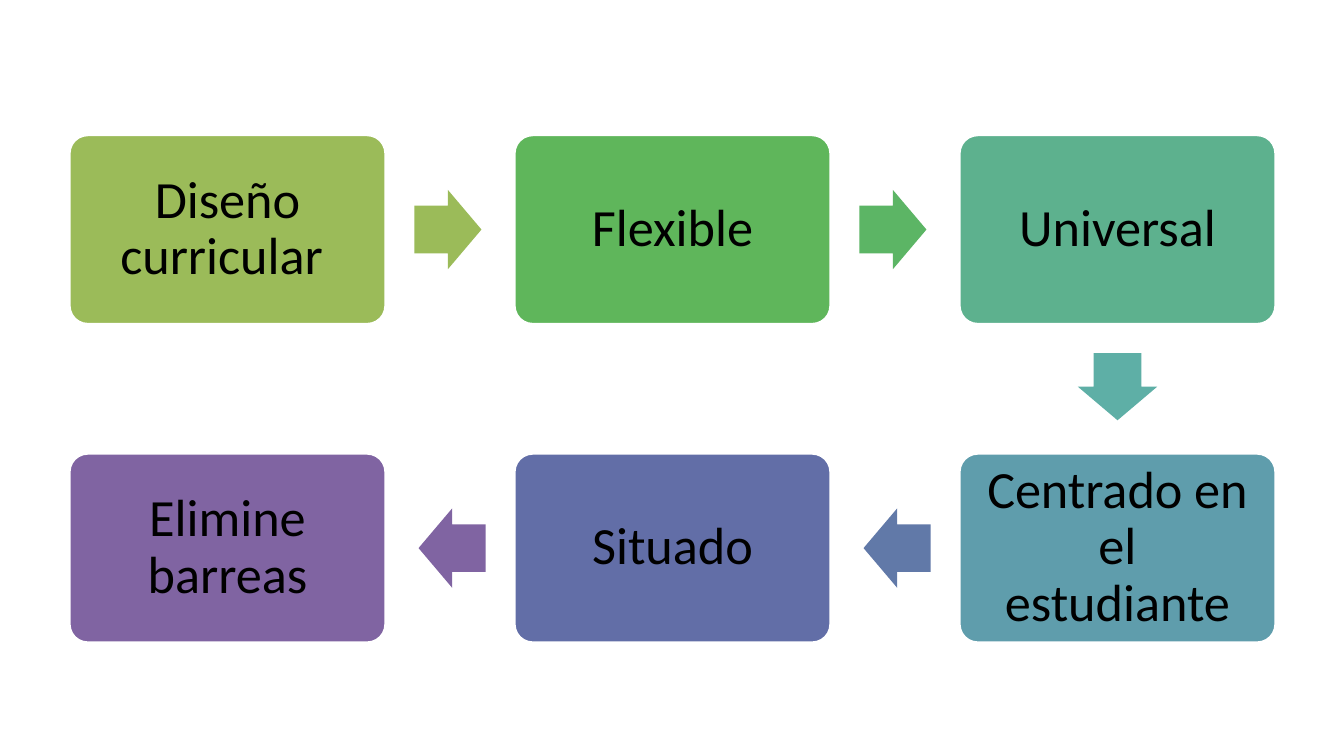
from pptx import Presentation
from pptx.dml.color import RGBColor
from pptx.enum.shapes import MSO_SHAPE as Shape
from pptx.enum.text import MSO_ANCHOR as Anchor, PP_ALIGN as Align
from pptx.util import Cm, Pt

COLOURS = {
    "white": "FFFFFF", "black": "000000",
    "olive": "9BBB59", "green": "5FB65B", "leaf": "5CB565",
    "mint": "5DB18E", "teal": "5EAFA6", "lagoon": "5F9DAC",
    "steel": "6179A8", "indigo": "626EA7", "purple": "8064A2",
}

# Lengths in centimetres
LEFT, TOP = 1.3, 2.54
COLUMN_STEP, ROW_STEP = 8.41, 6.02
BOX_WIDTH, BOX_HEIGHT = 6.0, 3.6
ARROW_WIDTH, ARROW_HEIGHT = 1.27, 1.5
ARROW_SHIFT = 0.04  # each arrow sits slightly nearer the box it leaves
INSET = 0.3

# Text, column, row, box colour, then direction and colour of the arrow out
STEPS = [
    ("Diseño curricular ", 0, 0, "olive", (1, 0), "olive"),
    ("Flexible", 1, 0, "green", (1, 0), "leaf"),
    ("Universal", 2, 0, "mint", (0, 1), "teal"),
    ("Centrado en el estudiante", 2, 1, "lagoon", (-1, 0), "steel"),
    ("Situado", 1, 1, "indigo", (-1, 0), "purple"),
    ("Elimine barreas", 0, 1, "purple", None, None),
]
ROTATION = {(1, 0): 0, (0, 1): 90, (-1, 0): 180}


def rgb(name):
    return RGBColor.from_string(COLOURS[name])


def add_filled(kind, centre_x, centre_y, width, height, colour):
    """Add a filled shape placed by its centre."""
    shape = page.shapes.add_shape(
        kind, Cm(centre_x - width / 2), Cm(centre_y - height / 2),
        Cm(width), Cm(height))
    shape.shadow.inherit = False
    shape.fill.solid()
    shape.fill.fore_color.rgb = rgb(colour)
    return shape


deck = Presentation()
deck.slide_width, deck.slide_height = Cm(25.4), Cm(14.29)
page = deck.slides.add_slide(deck.slide_layouts[6])

for text, column, row, colour, direction, arrow_colour in STEPS:
    x = LEFT + BOX_WIDTH / 2 + column * COLUMN_STEP
    y = TOP + BOX_HEIGHT / 2 + row * ROW_STEP

    box = add_filled(Shape.ROUNDED_RECTANGLE, x, y, BOX_WIDTH, BOX_HEIGHT, colour)
    box.adjustments[0] = 0.1
    box.line.color.rgb = rgb("white")
    box.line.width = Pt(2)

    frame = box.text_frame
    frame.word_wrap = True
    frame.vertical_anchor = Anchor.MIDDLE
    frame.margin_left = frame.margin_right = Cm(INSET)
    frame.margin_top = frame.margin_bottom = Cm(INSET)
    para = frame.paragraphs[0]
    para.alignment = Align.CENTER
    para.line_spacing = 0.9
    span = para.add_run()
    span.text = text
    span.font.name = "Calibri"
    span.font.size = Pt(28)
    span.font.color.rgb = rgb("black")

    if direction:
        across, down = direction
        arrow = add_filled(
            Shape.RIGHT_ARROW,
            x + across * (COLUMN_STEP / 2 - ARROW_SHIFT),
            y + down * (ROW_STEP / 2 - ARROW_SHIFT),
            ARROW_WIDTH, ARROW_HEIGHT, arrow_colour)
        arrow.adjustments[0] = 0.6
        arrow.adjustments[1] = 0.5
        arrow.rotation = ROTATION[direction]
        arrow.line.fill.background()

deck.save("out.pptx")
